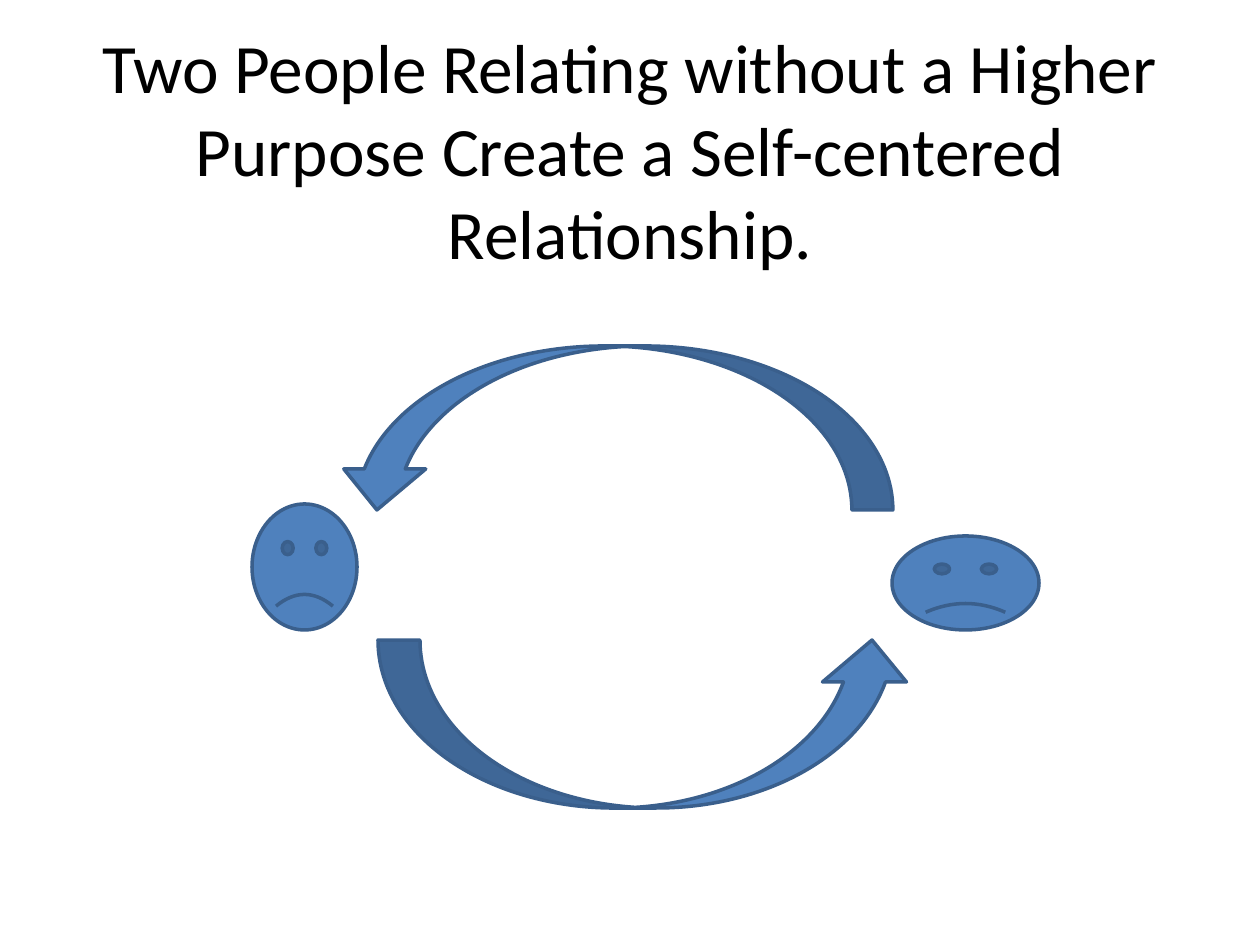
"""Build a slide of two unhappy faces linked by a loop of curved arrows."""
from dataclasses import dataclass

from pptx import Presentation
from pptx import util as u
from pptx.dml.color import RGBColor
from pptx.enum import shapes, text

PX_PER_INCH = 126
Kind = shapes.MSO_SHAPE


@dataclass(frozen=True)
class Theme:
    font: str = "Calibri"
    title_size: float = 39.6
    line_width: float = 2
    ink: RGBColor = RGBColor(0x00, 0x00, 0x00)
    fill: RGBColor = RGBColor(0x4F, 0x81, 0xBD)
    line: RGBColor = RGBColor(0x3A, 0x5F, 0x8C)


@dataclass(frozen=True)
class Box:
    left: int
    top: int
    width: int
    height: int

    def emu(self) -> list[u.Emu]:
        return [px(v) for v in (self.left, self.top, self.width, self.height)]


@dataclass(frozen=True)
class Figure:
    kind: Kind
    box: Box
    adjustments: tuple[float, ...]
    mirrored: bool = False


THEME = Theme()
ARROW_BEND = (0.25, 0.5, 0.25)
FROWN = (-0.047,)
TITLE = "Two People Relating without a Higher Purpose Create a Self-centered Relationship."
TITLE_BOX = Box(63, 42, 1134, 214)
FIGURES = (
    Figure(Kind.CURVED_UP_ARROW, Box(378, 640, 536, 168), ARROW_BEND),
    Figure(Kind.CURVED_DOWN_ARROW, Box(336, 346, 557, 164), ARROW_BEND, mirrored=True),
    Figure(Kind.SMILEY_FACE, Box(252, 504, 105, 126), FROWN),
    Figure(Kind.SMILEY_FACE, Box(892, 536, 147, 94), FROWN),
)


def px(length: int) -> u.Emu:
    return u.Emu(round(length * u.Inches(1) / PX_PER_INCH))


def place(shape, box: Box) -> None:
    shape.left, shape.top, shape.width, shape.height = box.emu()


def write(shape, words: str, *, size: float, color: RGBColor,
          align=text.PP_ALIGN.CENTER, anchor=text.MSO_ANCHOR.MIDDLE) -> None:
    frame = shape.text_frame
    frame.word_wrap = True
    frame.auto_size = text.MSO_AUTO_SIZE.NONE
    frame.vertical_anchor = anchor
    para = frame.paragraphs[0]
    para.alignment = align
    span = para.add_run()
    span.text = words
    span.font.name = THEME.font
    span.font.size = u.Pt(size)
    span.font.color.rgb = color


def draw(page, figure: Figure) -> None:
    shape = page.shapes.add_shape(figure.kind, *figure.box.emu())
    for index, value in enumerate(figure.adjustments):
        shape.adjustments[index] = value
    shape.shadow.inherit = False
    shape.fill.solid()
    shape.fill.fore_color.rgb = THEME.fill
    shape.line.color.rgb = THEME.line
    shape.line.width = u.Pt(THEME.line_width)
    if figure.mirrored:
        shape.element.spPr.get_or_add_xfrm().set("flipH", "1")


def main() -> None:
    deck = Presentation()
    deck.slide_width, deck.slide_height = px(1260), px(945)
    page = deck.slides.add_slide(deck.slide_layouts.get_by_name("Title Only"))
    title = page.shapes.title
    place(title, TITLE_BOX)
    write(title, TITLE, size=THEME.title_size, color=THEME.ink)
    for figure in FIGURES:
        draw(page, figure)
    deck.save("out.pptx")


if __name__ == "__main__":
    main()
